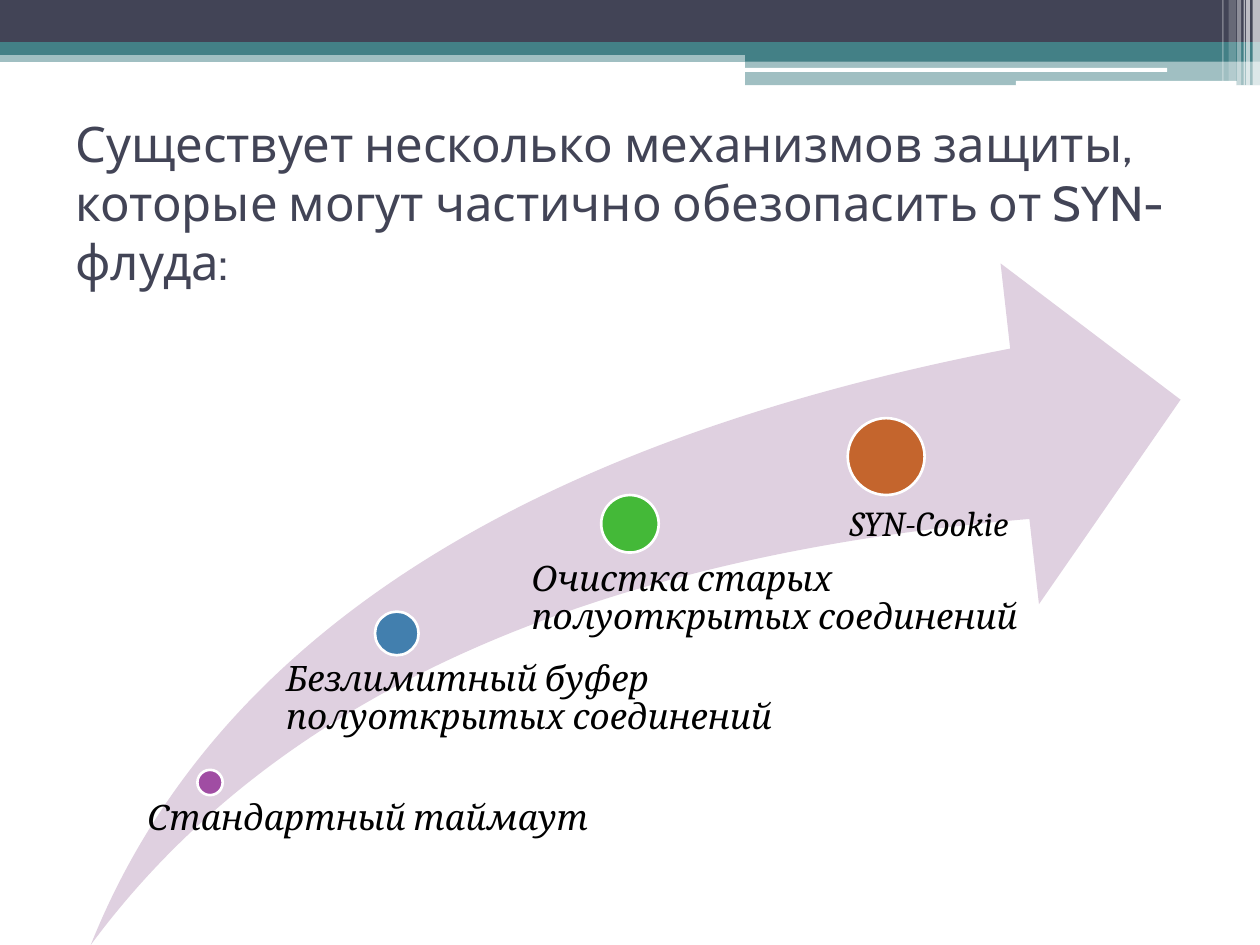
"""Build the slide on ways to guard against a SYN flood."""
from dataclasses import dataclass

from lxml import etree
from pptx import Presentation
from pptx.dml.color import RGBColor
from pptx.enum.shapes import MSO_SHAPE
from pptx.enum.text import MSO_ANCHOR
from pptx.oxml.ns import qn
from pptx.util import Cm, Pt

RECT = MSO_SHAPE.RECTANGLE
ROUND = MSO_SHAPE.ROUNDED_RECTANGLE
OVAL = MSO_SHAPE.OVAL
SWOOSH = MSO_SHAPE.SWOOSH_ARROW
MIDDLE = MSO_ANCHOR.MIDDLE
TOP = MSO_ANCHOR.TOP


@dataclass(frozen=True)
class Theme:
    navy: str = "424456"
    teal: str = "438086"
    white: str = "FFFFFF"
    black: str = "000000"
    lilac: str = "DFD0E0"
    plum: str = "A04DA3"
    blue: str = "427FAE"
    green: str = "44B938"
    rust: str = "C4652D"
    head: str = "Cabin"
    body: str = "Cambria"
    big: int = 28
    small: int = 20
    edge: float = 1.5


@dataclass(frozen=True)
class Box:
    left: float
    top: float
    width: float
    height: float

    def size(self) -> tuple:
        return Cm(self.left), Cm(self.top), Cm(self.width), Cm(self.height)


@dataclass(frozen=True)
class Bar:
    box: Box
    color: str
    alpha: int = 100
    kind: int = RECT


@dataclass(frozen=True)
class Step:
    text: str
    color: str
    dot: Box
    label: Box
    inset: float


THEME = Theme()
SPLIT = 15.02
BARS = [
    Bar(Box(0, 1.02, 25.4, 0.23), THEME.teal, 50),
    Bar(Box(0, 0, 25.4, 0.86), THEME.navy),
    Bar(Box(0, 0.85, 25.4, 0.26), THEME.teal),
    Bar(Box(SPLIT, 0.99, 10.38, 0.25), THEME.teal),
    Bar(Box(SPLIT, 1.23, 10.38, 0.49), THEME.teal, 50),
    Bar(Box(15.01, 1.37, 8.52, 0.08), THEME.white, kind=ROUND),
    Bar(Box(20.48, 1.63, 4.45, 0.1), THEME.white, kind=ROUND),
] + [
    Bar(Box(left, 0, width, height), THEME.white, alpha)
    for left, width, height, alpha in (
        (25.25, 0.15, 1.73, 65),
        (25.12, 0.08, 1.73, 65),
        (25.07, 0.03, 1.73, 60),
        (24.94, 0.08, 1.73, 40),
        (24.77, 0.15, 1.63, 20),
        (24.64, 0.03, 1.63, 30),
    )
]
STEPS = [
    Step("Стандартный таймаут", THEME.plum,
         Box(3.98, 15.52, 0.51, 0.51), Box(2.69, 16.13, 10.19, 2.54), 0.28),
    Step("Безлимитный буфер полуоткрытых соединений", THEME.blue,
         Box(7.56, 12.33, 0.88, 0.88), Box(5.31, 13.34, 12.24, 5.41), 0.46),
    Step("Очистка старых полуоткрытых соединений", THEME.green,
         Box(12.12, 9.98, 1.16, 1.16), Box(10.11, 11.32, 11.73, 6.91), 0.61),
    Step("SYN-Cookie", THEME.rust,
         Box(17.09, 8.43, 1.55, 1.55), Box(16.3, 10.21, 5.87, 3.73), 0.83),
]
TITLE = ("Существует несколько механизмов защиты, "
         "которые могут частично обезопасить от SYN-флуда:\v")


def draw(shapes, bar: Bar, edge: str = ""):
    """Draw a filled shape, with an outline only if an edge colour is given."""
    shape = shapes.add_shape(bar.kind, *bar.box.size())
    shape.shadow.inherit = False
    shape.fill.solid()
    shape.fill.fore_color.rgb = RGBColor.from_string(bar.color)
    if bar.alpha < 100:
        color = shape.fill._xPr.find(".//" + qn("a:srgbClr"))
        etree.SubElement(color, qn("a:alpha"), val=str(bar.alpha * 1000))
    if edge:
        shape.line.color.rgb = RGBColor.from_string(edge)
        shape.line.width = Pt(THEME.edge)
    else:
        shape.line.fill.background()
    return shape


def write(shapes, box: Box, text: str, font: str, size: int, color: str,
          anchor=TOP):
    """Add a wrapped text box with one styled paragraph."""
    frame = shapes.add_textbox(*box.size()).text_frame
    frame.word_wrap = True
    frame.vertical_anchor = anchor
    para = frame.paragraphs[0]
    para.text = text
    para.font.name = font
    para.font.size = Pt(size)
    para.font.color.rgb = RGBColor.from_string(color)
    return frame


def add_step(shapes, step: Step) -> None:
    """Draw a dot on the arrow and its label."""
    draw(shapes, Bar(step.dot, step.color, kind=OVAL), THEME.white)
    frame = write(shapes, step.label, step.text, THEME.body, THEME.small,
                  THEME.black)
    frame.margin_left = Cm(step.inset)
    frame.margin_top = frame.margin_right = frame.margin_bottom = Cm(0)
    para = frame.paragraphs[0]
    para.line_spacing = 0.9
    para.font.italic = True


def main() -> None:
    """Build and save the deck."""
    deck = Presentation()
    deck.slide_width, deck.slide_height = Cm(25.4), Cm(19.05)
    slide = deck.slides.add_slide(deck.slide_layouts[6])
    for bar in BARS:
        draw(slide.shapes, bar)
    write(slide.shapes, Box(1.27, 3.18, 22.86, 2.97), TITLE, THEME.head,
          THEME.big, THEME.navy, MIDDLE)
    group = slide.shapes.add_group_shape().shapes
    arrow = draw(group, Bar(Box(1.83, 5.31, 21.97, 13.74), THEME.lilac,
                            kind=SWOOSH))
    arrow.adjustments[0] = arrow.adjustments[1] = 0.25
    for step in STEPS:
        add_step(group, step)
    deck.save("out.pptx")


if __name__ == "__main__":
    main()
